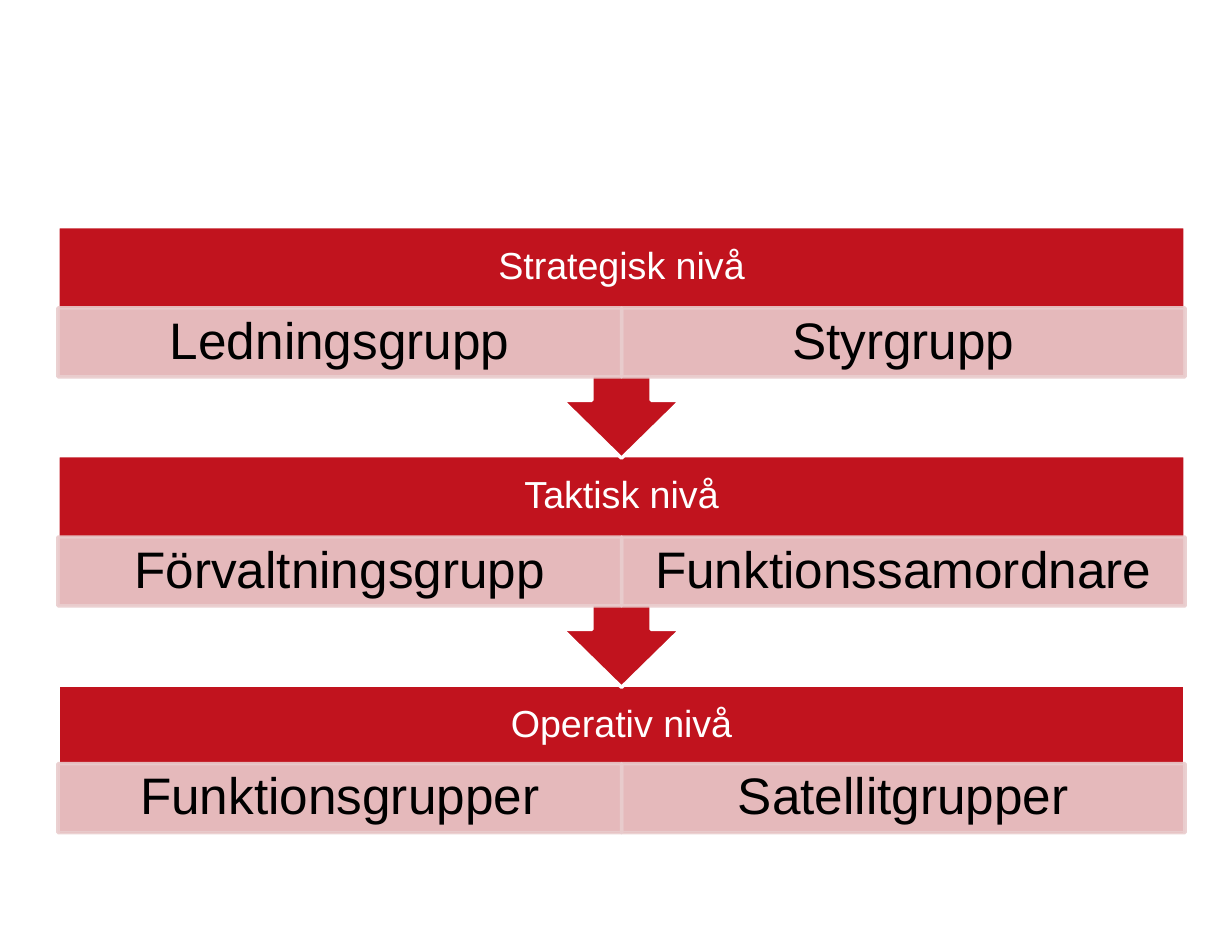
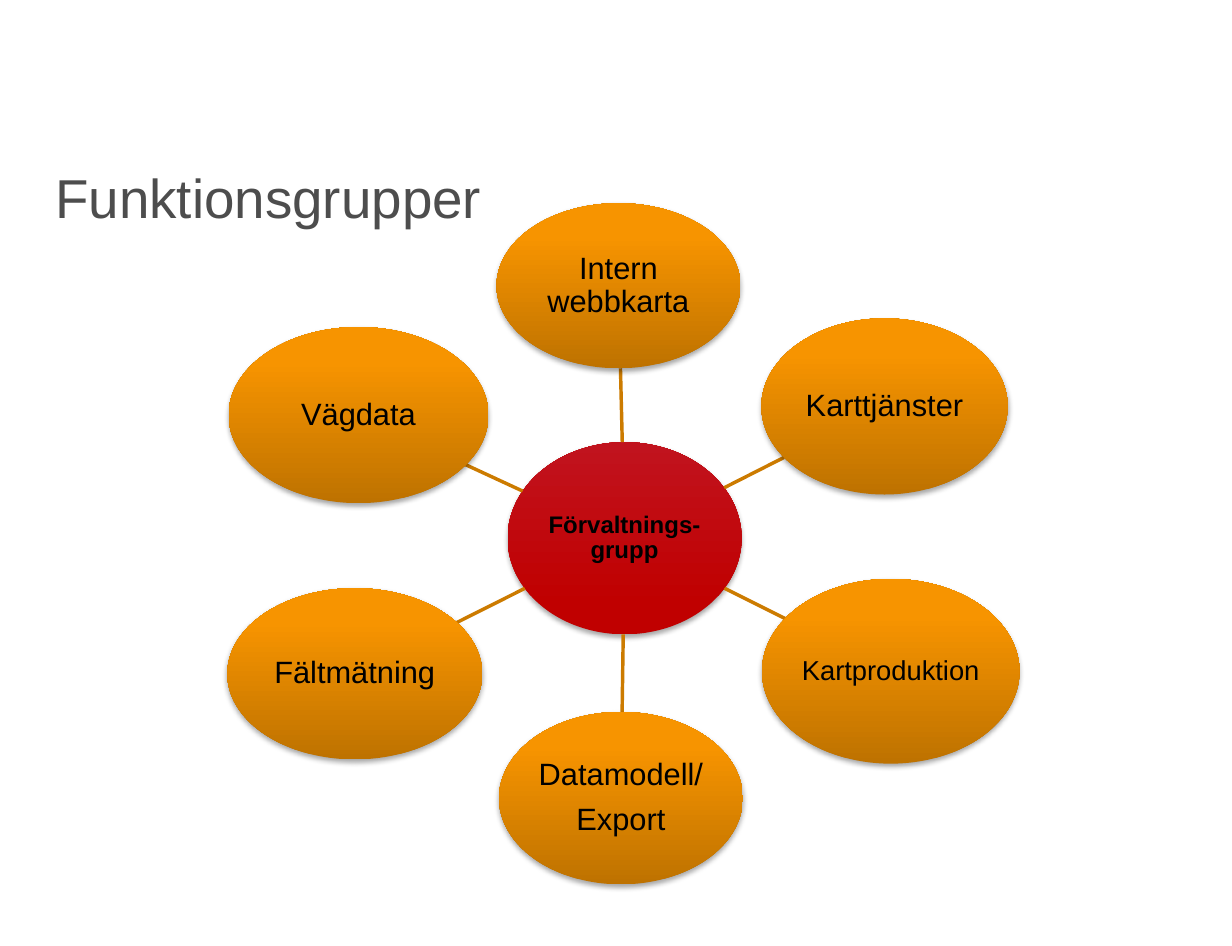
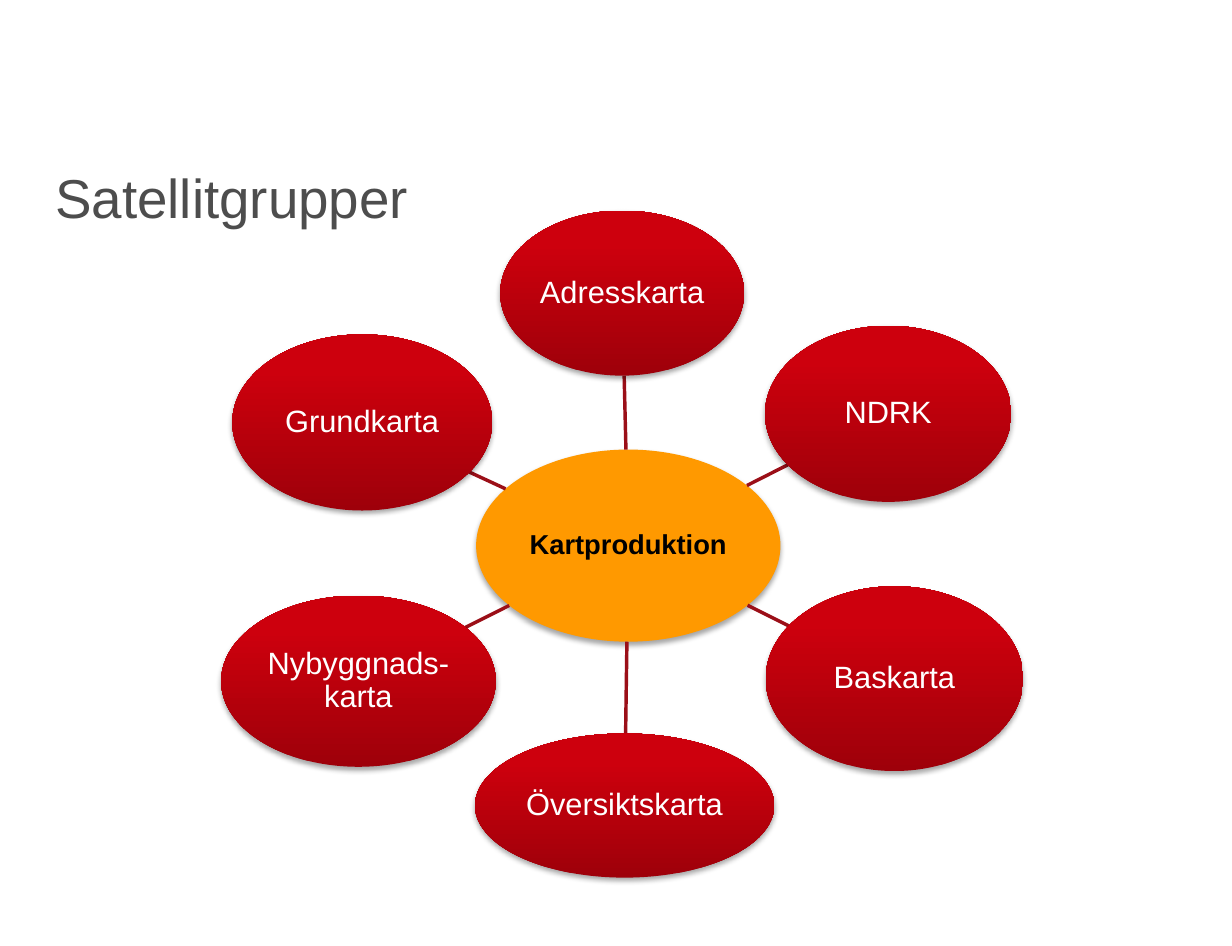
import math

from pptx import Presentation, util as u
from pptx.dml.color import RGBColor
from pptx.enum import shapes, text
from pptx.oxml import parse_xml
from pptx.oxml.ns import nsdecls, qn

# Shared look
W, H = 10, 7.68
FONT = "Arial"
RED, PINK, WHITE, BLACK, GREY = "C1131E", "E9CCCD", "FFFFFF", "000000", "4D4D4D"
ORANGE_BALL = [(0, "BE7200"), (80, "F79400"), (100, "F89500")]
RED_BALL = [(0, "9E000A"), (80, "CD000D"), (100, "CE000D")]
HUB_BALL = [(14, "C00000"), (100, RED)]

# Levels, top to bottom: heading and its two groups
LEVELS = [
    ("Strategisk nivå", ("Ledningsgrupp", "Styrgrupp")),
    ("Taktisk nivå", ("Förvaltningsgrupp", "Funktionssamordnare")),
    ("Operativ nivå", ("Funktionsgrupper", "Satellitgrupper")),
]
LEFT, TOP, STEP, WIDTH = 0.47, 1.84, 1.86, 9.15
BAND, TIP, CELL = 1.22, 1.88, 0.56

# Ball positions, clockwise from the top: offset from the hub, then size
RING = [
    (-0.05, -2.05, 1.98, 1.34),
    (2.11, -1.07, 2.0, 1.43),
    (2.16, 1.08, 2.09, 1.5),
    (-0.03, 2.11, 1.98, 1.4),
    (-2.19, 1.1, 2.07, 1.39),
    (-2.16, -1.0, 2.11, 1.43),
]

# Hub: text, centre, size, text size, fill. Balls: paragraphs, optional text size and ball size
WHEELS = [
    {
        "title": "Funktionsgrupper",
        "hub": ("Förvaltnings-grupp", (5.07, 4.37), (1.9, 1.56), 14, HUB_BALL),
        "fill": ORANGE_BALL, "ink": BLACK, "spoke": "CC7B00",
        "balls": [
            {"text": ["Intern webbkarta"]},
            {"text": ["Karttjänster"]},
            {"text": ["Kartproduktion"], "pt": 16},
            {"text": ["Datamodell/", "Export"]},
            {"text": ["Fältmätning"]},
            {"text": ["Vägdata"]},
        ],
    },
    {
        "title": "Satellitgrupper",
        "hub": ("Kartproduktion", (5.1, 4.43), (2.47, 1.56), 16, "FF9900"),
        "fill": RED_BALL, "ink": WHITE, "spoke": "9B0F18",
        "balls": [
            {"text": ["Adresskarta"]},
            {"text": ["NDRK"]},
            {"text": ["Baskarta"]},
            {"text": ["Översiktskarta"], "size": (2.43, 1.17)},
            {"text": ["Nybyggnads-karta"], "size": (2.23, 1.39)},
            {"text": ["Grundkarta"]},
        ],
    },
]


# Helpers
def rgb(value):
    return RGBColor.from_string(value)


def inches(*values):
    return [u.Inches(v) for v in values]


def write(sp, lines, pt, color, margins, bold=False):
    """Centred text with the tight spacing of the diagrams."""
    tf = sp.text_frame
    tf.word_wrap = True
    tf.vertical_anchor = text.MSO_ANCHOR.MIDDLE
    tf.margin_left, tf.margin_top, tf.margin_right, tf.margin_bottom = inches(*margins)
    for i, line in enumerate(lines):
        p = tf.add_paragraph() if i else tf.paragraphs[0]
        p.alignment = text.PP_ALIGN.CENTER
        p.line_spacing = 0.9
        p.space_after = u.Pt(round(0.4 * pt, 1))
        add_run(p, line, pt, color, bold)


def add_run(p, line, pt, color, bold=False):
    r = p.add_run()
    r.text = line
    r.font.name, r.font.size, r.font.bold = FONT, u.Pt(pt), bold
    r.font.color.rgb = rgb(color)


def paint(sp, fill, line):
    sp.shadow.inherit = False
    sp.fill.solid()
    sp.fill.fore_color.rgb = rgb(fill)
    sp.line.color.rgb = rgb(line)
    sp.line.width = u.Pt(2)


def add_title(s, title):
    sp = s.shapes.add_textbox(*inches(0.35, 1.24, 9, 0.79))
    sp.text_frame.word_wrap = True
    sp.text_frame.margin_top = u.Inches(0.09)
    add_run(sp.text_frame.paragraphs[0], title, 32, GREY)


# Levels slide
def add_band(s, y, heading, has_arrow):
    right, mid, base = LEFT + WIDTH, LEFT + WIDTH / 2, y + BAND
    points = [(LEFT, y), (right, y), (right, base)]
    if has_arrow:
        neck = base + 0.19
        points += [(mid + 0.24, base), (mid + 0.24, neck), (mid + 0.48, neck), (mid, y + TIP),
                   (mid - 0.48, neck), (mid - 0.24, neck), (mid - 0.24, base)]
    points.append((LEFT, base))
    points = [inches(*point) for point in points]
    builder = s.shapes.build_freeform(*points[0])
    builder.add_line_segments(points[1:], close=True)
    sp = builder.convert_to_shape()
    paint(sp, RED, WHITE)
    write(sp, [heading], 22, WHITE, (0.17, 0.17, 0.17, 1.39 if has_arrow else 0.73))


def add_cell(s, x, y, group):
    sp = s.shapes.add_shape(shapes.MSO_SHAPE.RECTANGLE, *inches(x, y, WIDTH / 2, CELL))
    paint(sp, PINK, PINK)
    for color in sp._element.spPr.iter(qn("a:srgbClr")):
        color.append(parse_xml(f'<a:alpha {nsdecls("a")} val="90000"/>'))
    write(sp, [group], 30, BLACK, (0.23, 0.04, 0.23, 0.04))


def add_levels(s):
    # Bottom level first, so that each arrow lies over the band below it
    for i in reversed(range(len(LEVELS))):
        heading, groups = LEVELS[i]
        y = TOP + i * STEP
        has_arrow = i < len(LEVELS) - 1
        add_band(s, y, heading, has_arrow)
        for col, group in enumerate(groups):
            add_cell(s, LEFT + col * WIDTH / 2, y + (0.66 if has_arrow else 0.64), group)


# Wheel slides
def add_ball(s, center, size, fill, lines, pt, color, bold=False):
    (cx, cy), (w, h) = center, size
    sp = s.shapes.add_shape(shapes.MSO_SHAPE.OVAL, *inches(cx - w / 2, cy - h / 2, w, h))
    sp.line.fill.background()
    spPr = sp._element.spPr
    if isinstance(fill, str):
        sp.fill.solid()
        sp.fill.fore_color.rgb = rgb(fill)
    else:
        stops = "".join(f'<a:gs pos="{pos * 1000}"><a:srgbClr val="{c}"/></a:gs>' for pos, c in fill)
        spPr.find(qn("a:prstGeom")).addnext(parse_xml(
            f'<a:gradFill {nsdecls("a")} rotWithShape="1"><a:gsLst>{stops}</a:gsLst>'
            '<a:lin ang="16200000" scaled="0"/></a:gradFill>'))
    sp.shadow.inherit = False
    spPr.find(qn("a:effectLst")).append(parse_xml(
        f'<a:outerShdw {nsdecls("a")} blurRad="{u.Pt(3.1)}" dist="{u.Pt(1.8)}" dir="5400000" '
        f'rotWithShape="0"><a:srgbClr val="{BLACK}"><a:alpha val="35000"/></a:srgbClr></a:outerShdw>'))
    write(sp, lines, pt, color, [0.01] * 4, bold)


def edge(center, size, target):
    """Point where the ellipse meets the line from its centre to target."""
    dx, dy = target[0] - center[0], target[1] - center[1]
    t = 1 / math.hypot(dx / (size[0] / 2), dy / (size[1] / 2))
    return center[0] + t * dx, center[1] + t * dy


def add_spoke(s, start, end, color):
    line = s.shapes.add_connector(shapes.MSO_CONNECTOR.STRAIGHT, *inches(*start, *end))
    line.line.color.rgb = rgb(color)
    line.line.width = u.Pt(2)
    line._element.spPr.append(parse_xml(f'<a:effectLst {nsdecls("a")}/>'))


def add_wheel(s, wheel):
    name, hub, hub_size, hub_pt, hub_fill = wheel["hub"]
    add_ball(s, hub, hub_size, hub_fill, [name], hub_pt, BLACK, True)
    for (dx, dy, w, h), ball in zip(RING, wheel["balls"]):
        center = hub[0] + dx, hub[1] + dy
        size = ball.get("size", (w, h))
        add_spoke(s, edge(hub, hub_size, center), edge(center, size, hub), wheel["spoke"])
        add_ball(s, center, size, wheel["fill"], ball["text"], ball.get("pt", 18), wheel["ink"])
    add_title(s, wheel["title"])


def main():
    prs = Presentation()
    prs.slide_width, prs.slide_height = inches(W, H)
    blank = prs.slide_layouts[6]
    add_levels(prs.slides.add_slide(blank))
    for wheel in WHEELS:
        add_wheel(prs.slides.add_slide(blank), wheel)
    prs.save("out.pptx")


if __name__ == "__main__":
    main()
